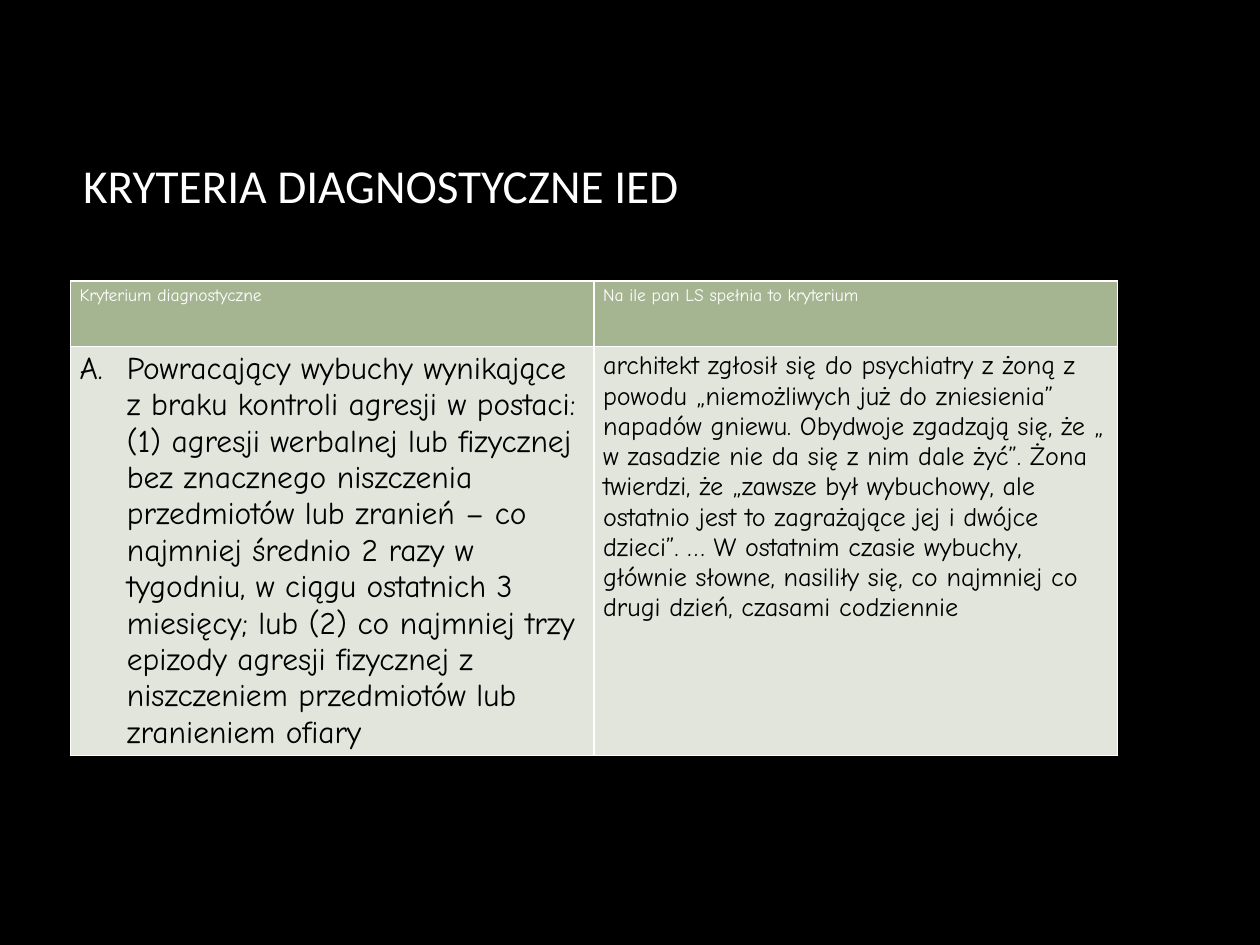
from dataclasses import dataclass

from lxml.etree import SubElement
from pptx import Presentation
from pptx.dml.color import RGBColor
from pptx.enum.text import MSO_ANCHOR, PP_ALIGN
from pptx.oxml import parse_xml
from pptx.oxml.ns import nsdecls, qn
from pptx.util import Pt


@dataclass(frozen=True)
class Theme:
    background: str = "000000"
    light: str = "FFFFFF"
    dark: str = "000000"
    header_fill: str = "A5B592"
    body_fill: str = "E1E5DC"
    title_font: str = "Calibri"
    table_font: str = "Comic Neue"
    title_size: float = 27
    header_size: float = 10
    criterion_size: float = 18
    evidence_size: float = 15
    border_width: float = 1


THEME = Theme()
LEFT, WIDTH = 40.3, 598.3
TITLE_TOP, TITLE_HEIGHT = 48.2, 114.5
TABLE_TOP = 160.6
ROW_HEIGHTS = (37.5, 233)
CELL_MARGINS = {"margin_left": 5.2, "margin_right": 5.2,
                "margin_top": 2.6, "margin_bottom": 2.6}
LIST_INDENT = 27

TITLE = "KRYTERIA DIAGNOSTYCZNE IED"
HEADERS = ("Kryterium diagnostyczne", "Na ile pan LS spełnia to kryterium")
CRITERION = (
    "Powracający wybuchy wynikające z braku kontroli agresji w postaci: "
    "(1) agresji werbalnej lub fizycznej bez znacznego niszczenia przedmiotów "
    "lub zranień – co najmniej średnio 2 razy w tygodniu, w ciągu ostatnich "
    "3 miesięcy; lub (2) co najmniej trzy epizody agresji fizycznej "
    "z niszczeniem przedmiotów lub zranieniem ofiary"
)
EVIDENCE = (
    "architekt zgłosił się do psychiatry z żoną z powodu „niemożliwych już do "
    "zniesienia” napadów gniewu. Obydwoje zgadzają się, że „ w zasadzie nie da "
    "się z nim dale żyć”. Żona twierdzi, że „zawsze był wybuchowy, ale ostatnio "
    "jest to zagrażające jej i dwójce dzieci”. … W ostatnim czasie wybuchy, "
    "głównie słowne, nasiliły się, co najmniej co drugi dzień, czasami codziennie"
)


def paint(fill, color):
    fill.solid()
    fill.fore_color.rgb = RGBColor.from_string(color)


def write(frame, text, font, size, color):
    paragraph = frame.paragraphs[0]
    paragraph.alignment = PP_ALIGN.LEFT
    run = paragraph.add_run()
    run.text = text
    for attribute, value in {"name": font, "size": Pt(size), "bold": False}.items():
        setattr(run.font, attribute, value)
    run.font.color.rgb = RGBColor.from_string(color)
    return paragraph


def add_borders(cell):
    """Outline the cell; border elements must precede its fill."""
    properties = cell._tc.get_or_add_tcPr()
    for position, side in enumerate("LRTB"):
        properties.insert(position, parse_xml(
            f'<a:ln{side} {nsdecls("a")} w="{Pt(THEME.border_width)}">'
            f'<a:solidFill><a:srgbClr val="{THEME.light}"/></a:solidFill>'
            f'</a:ln{side}>'))


def letter_item(paragraph):
    """Number the paragraph A., B., ... with a hanging indent."""
    properties = paragraph._p.get_or_add_pPr()
    properties.set("marL", str(Pt(LIST_INDENT)))
    properties.set("indent", str(-Pt(LIST_INDENT)))
    SubElement(properties, qn("a:buAutoNum"), type="alphaUcPeriod")


def fill_cell(cell, text, size, color, fill):
    for attribute, value in CELL_MARGINS.items():
        setattr(cell, attribute, Pt(value))
    paint(cell.fill, fill)
    add_borders(cell)
    return write(cell.text_frame, text, THEME.table_font, size, color)


def add_title(slide):
    title = slide.shapes.title
    placement = {"left": LEFT, "top": TITLE_TOP,
                 "width": WIDTH, "height": TITLE_HEIGHT}
    for attribute, value in placement.items():
        setattr(title, attribute, Pt(value))
    title.text_frame.vertical_anchor = MSO_ANCHOR.MIDDLE
    write(title.text_frame, TITLE, THEME.title_font, THEME.title_size, THEME.light)


def add_criteria_table(slide):
    criteria = slide.shapes.add_table(
        len(ROW_HEIGHTS), len(HEADERS), Pt(LEFT), Pt(TABLE_TOP),
        Pt(WIDTH), Pt(sum(ROW_HEIGHTS))).table
    criteria.first_row = criteria.horz_banding = False
    for row, height in zip(criteria.rows, ROW_HEIGHTS):
        row.height = Pt(height)
    for column, header in enumerate(HEADERS):
        fill_cell(criteria.cell(0, column), header, THEME.header_size,
                  THEME.light, THEME.header_fill)
    criterion, evidence = criteria.rows[1].cells
    letter_item(fill_cell(criterion, CRITERION, THEME.criterion_size,
                          THEME.dark, THEME.body_fill))
    fill_cell(evidence, EVIDENCE, THEME.evidence_size,
              THEME.dark, THEME.body_fill)


def main():
    deck = Presentation()
    deck.slide_width, deck.slide_height = Pt(720), Pt(540)
    slide = deck.slides.add_slide(deck.slide_layouts.get_by_name("Title Only"))
    paint(slide.background.fill, THEME.background)
    add_title(slide)
    add_criteria_table(slide)
    deck.save("out.pptx")


if __name__ == "__main__":
    main()
